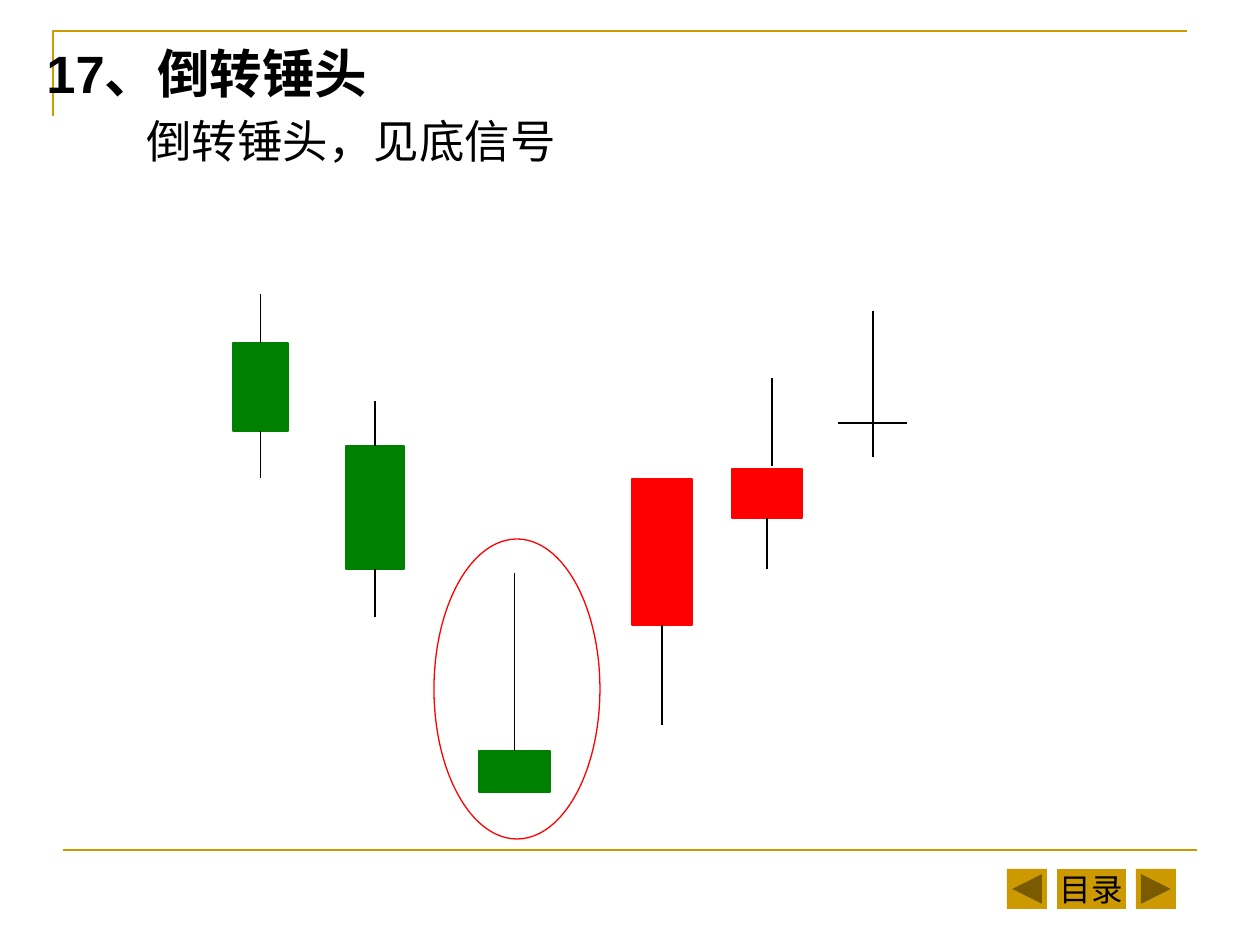
import pptx
import pptx.dml.color
import pptx.enum.shapes
import pptx.enum.text
import pptx.util
from pptx.oxml.ns import qn

PX = 914400 / 126
GOLD, GREEN, RED, BLACK, WHITE = "CC9900", "008000", "FF0000", "000000", "FFFFFF"
SHAPE = pptx.enum.shapes.MSO_SHAPE
TOP, BOTTOM = 0, 2

# left, top, width, height, high, low, colour (None: no shadow on that side)
CANDLES = [
    (233, 343, 55, 88, 294, 478, GREEN),
    (346, 446, 58, 123, 401, 617, GREEN),
    (479, 751, 71, 41, 573, None, GREEN),
    (632, 479, 60, 146, None, 725, RED),
    (732, 469, 70, 49, None, 569, RED),
]


def px(n):
    return pptx.util.Emu(round(n * PX))


def rgb(value):
    return pptx.dml.color.RGBColor.from_string(value)


def set_font(p, size, bold=False):
    p.font.name = "Arial"
    p.font.size = pptx.util.Pt(size)
    p.font.bold = bold
    p.font.color.rgb = rgb(BLACK)


def style(sp, fill=None, line=None, width=0.75):
    sp.shadow.inherit = False
    if fill:
        sp.fill.solid()
        sp.fill.fore_color.rgb = rgb(fill)
    else:
        sp.fill.background()
    if line:
        sp.line.color.rgb = rgb(line)
        sp.line.width = pptx.util.Pt(width)
    else:
        sp.line.fill.background()


def add_shape(s, kind, x, y, w, h, fill, line=None):
    sp = s.shapes.add_shape(kind, px(x), px(y), px(w), px(h))
    style(sp, fill, line)
    return sp


def add_line(s, x1, y1, x2, y2, color=BLACK, width=0.75):
    line = s.shapes.add_connector(
        pptx.enum.shapes.MSO_CONNECTOR.STRAIGHT, px(x1), px(y1), px(x2), px(y2))
    line.line.color.rgb = rgb(color)
    line.line.width = pptx.util.Pt(width)
    line._element.spPr.append(line._element.makeelement(qn("a:effectLst"), {}))
    return line


def add_candle(s, x, y, w, h, high, low, color):
    """Draw a body with shadows joined to the middle of its top and bottom."""
    body = add_shape(s, SHAPE.RECTANGLE, x, y, w, h, color, color)
    middle = x + w / 2
    for site, edge, end in ((TOP, y, high), (BOTTOM, y + h, low)):
        if end is not None:
            add_line(s, middle, edge, middle, end).begin_connect(body, site)


def add_frame(s):
    builder = s.shapes.build_freeform(53, 116, scale=PX)
    builder.add_line_segments([(53, 31), (1187, 31)], close=False)
    style(builder.convert_to_shape(), line=GOLD, width=1.5)
    add_line(s, 63, 850, 1197, 850, GOLD, 1.5)


def add_buttons(s):
    contents = add_shape(s, SHAPE.ACTION_BUTTON_CUSTOM, 1057, 869, 69, 40, GOLD)
    tf = contents.text_frame
    tf.word_wrap = False
    tf.vertical_anchor = pptx.enum.text.MSO_ANCHOR.MIDDLE
    p = tf.paragraphs[0]
    p.text = "目录"
    p.alignment = pptx.enum.text.PP_ALIGN.CENTER
    set_font(p, 18)
    add_shape(s, SHAPE.ACTION_BUTTON_BACK_OR_PREVIOUS, 1007, 869, 40, 40, GOLD)
    add_shape(s, SHAPE.ACTION_BUTTON_FORWARD_OR_NEXT, 1136, 869, 40, 40, GOLD)


def add_text(s):
    tf = s.shapes.add_textbox(px(34), px(35), px(1134), px(624)).text_frame
    tf.word_wrap = True
    title = tf.paragraphs[0]
    title.text = "17、倒转锤头"
    set_font(title, 30, bold=True)
    summary = tf.add_paragraph()
    summary.text = "倒转锤头，见底信号"
    summary.space_before = pptx.util.Pt(5)
    summary._p.get_or_add_pPr().set("marL", str(px(100)))
    set_font(summary, 26)


def main():
    prs = pptx.Presentation()
    prs.slide_width, prs.slide_height = px(1260), px(945)
    s = prs.slides.add_slide(prs.slide_layouts[6])
    add_frame(s)
    add_buttons(s)
    add_text(s)
    add_shape(s, SHAPE.OVAL, 434, 539, 166, 300, WHITE, RED)
    for candle in CANDLES:
        add_candle(s, *candle)
    add_line(s, 772, 466, 772, 378)  # off-centre upper shadow of the last body
    add_line(s, 873, 457, 873, 311)
    add_line(s, 907, 423, 838, 423)
    prs.save("out.pptx")


if __name__ == "__main__":
    main()
